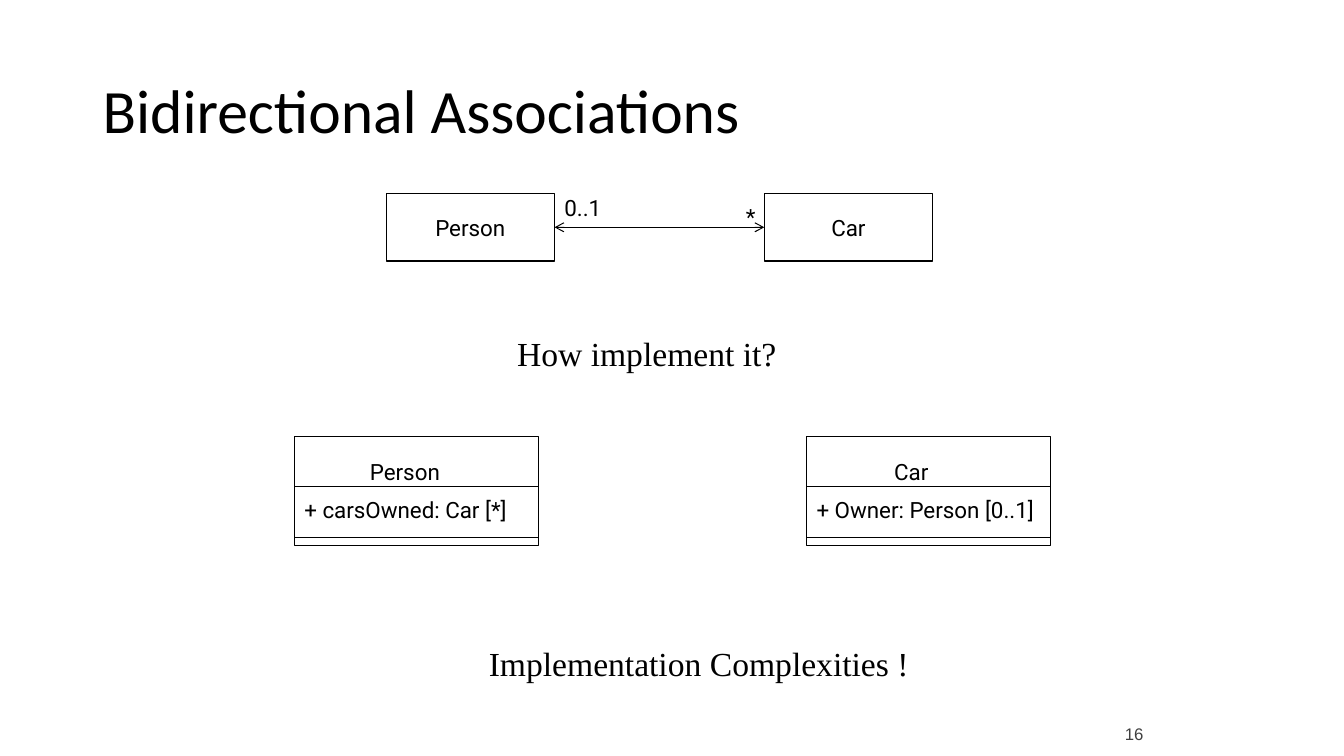
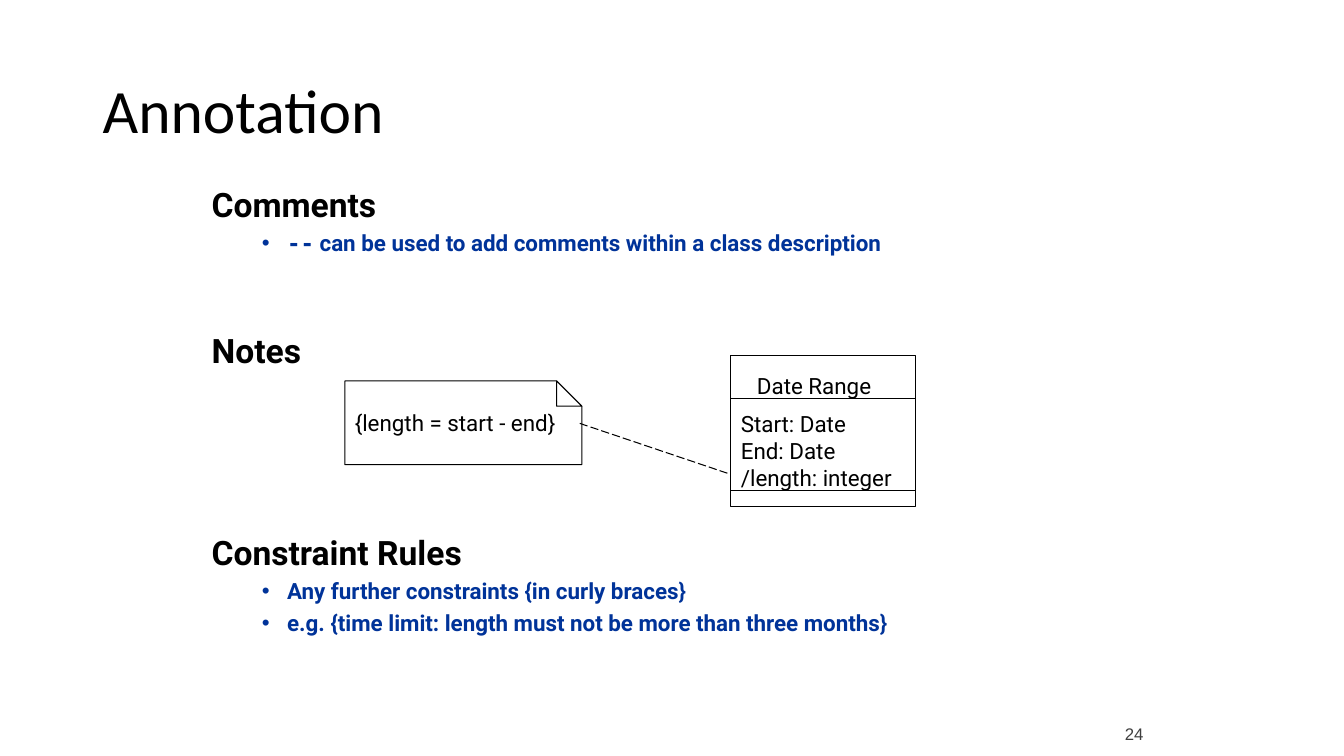
from lxml import etree
from pptx import Presentation
from pptx.dml.color import RGBColor
from pptx.enum import dml, shapes, text
from pptx.oxml.ns import qn
from pptx.util import Inches, Pt

BLACK = RGBColor(0x00, 0x00, 0x00)
GREY = RGBColor(0x3F, 0x3F, 0x3F)
WHITE = RGBColor(0xFF, 0xFF, 0xFF)
BLUE = RGBColor(0x00, 0x33, 0x99)
SANS, SERIF, MONO = "Roboto", "Times New Roman", "DejaVu Sans Mono"
MIDDLE, BOTTOM = text.MSO_ANCHOR.MIDDLE, text.MSO_ANCHOR.BOTTOM
CENTER, RIGHT = text.PP_ALIGN.CENTER, text.PP_ALIGN.RIGHT

ENTITIES = [("Person", 3.83), ("Car", 7.58)]
ENTITY_TOP, ENTITY_WIDTH, ENTITY_HEIGHT = 1.92, 1.67, 0.67
MULTIPLICITIES = [("*", (7.3, 1.97, 0.35, 0.37)), ("0..1", (5.5, 1.88, 0.7, 0.37))]
REMARKS = [
    ("How implement it?", (4.58, 3.25, 3.67, 0.5), CENTER),
    ("Implementation Complexities !", (4.75, 6.33, 4.6, 0.5), None),
]
OWNER_CLASSES = [
    dict(name="Person", members=["+ carsOwned: Car [*]"], name_indent=0.65,
         area=(2.92, 4.33, 2.42, 1.08), dividers=(0.5, 1)),
    dict(name="Car", members=["+ Owner: Person [0..1]"], name_indent=0.77,
         area=(8, 4.33, 2.42, 1.08), dividers=(0.5, 1)),
]
DATE_CLASS = dict(name="Date Range", members=["Start: Date", "End: Date", "/length: integer"],
                  name_indent=0.16, area=(7.25, 3.53, 1.83, 1.5), dividers=(0.42, 1.34))
SECTIONS = [
    ("Comments", 1.78, [[("--", MONO), (" can be used to add comments within a class description", SANS)]]),
    ("Notes", 3.22, []),
    ("Constraint Rules", 5.23, [
        [("Any further constraints {in curly braces}", SANS)],
        [("e.g. {time limit: length must not be more than three months}", SANS)],
    ]),
]
NOTE_TEXT = "{length = start - end}"
NOTE_AREA, FOLD = (3.42, 3.78, 2.35, 0.83), 0.25


def inches(values):
    return [Inches(value) for value in values]


def add_span(para, content, font=SANS, size=16, color=BLACK, bold=False):
    span = para.add_run()
    span.text = content
    span.font.name, span.font.size, span.font.bold = font, Pt(size), bold
    span.font.color.rgb = color


def write(box, content, align=None, anchor=None, spacing=None, **style):
    frame = box.text_frame
    frame.word_wrap = True
    if anchor is not None:
        frame.vertical_anchor = anchor
    lines = [content] if isinstance(content, str) else content
    for index, line in enumerate(lines):
        para = frame.paragraphs[0] if index == 0 else frame.add_paragraph()
        para.alignment = align or text.PP_ALIGN.LEFT
        para.line_spacing = spacing
        add_span(para, line, **style)
    return frame


def add_label(page, content, area, **style):
    return write(page.shapes.add_textbox(*inches(area)), content, **style)


def outline(box, fill=None):
    box.shadow.inherit = False
    box.line.color.rgb, box.line.width = BLACK, Pt(0.75)
    if fill is None:
        box.fill.background()
    else:
        box.fill.solid()
        box.fill.fore_color.rgb = fill
    return box


def add_box(page, area, kind=shapes.MSO_SHAPE.RECTANGLE, fill=None):
    return outline(page.shapes.add_shape(kind, *inches(area)), fill)


def add_line(page, ends, dash=None, arrows=False):
    line = page.shapes.add_connector(shapes.MSO_CONNECTOR.STRAIGHT, *inches(ends))
    line.line.color.rgb, line.line.width = BLACK, Pt(0.75)
    if dash is not None:
        line.line.dash_style = dash
    if arrows:
        stroke = line.line._get_or_add_ln()
        for end in ("a:headEnd", "a:tailEnd"):
            etree.SubElement(stroke, qn(end), type="arrow")
    etree.SubElement(line._element.spPr, qn("a:effectLst"))


def add_class(page, name, members, name_indent, area, dividers):
    left, top, width, _ = area
    frame = write(add_box(page, area), [name, *members], anchor=MIDDLE)
    frame.paragraphs[0]._p.get_or_add_pPr().set("marL", str(Inches(name_indent)))
    frame.paragraphs[1].space_before = Pt(8)
    for offset in dividers:
        add_line(page, (left, top + offset, left + width, top + offset))


def add_note(page):
    left, top, width, height = NOTE_AREA
    right, bottom = left + width, top + height
    corners = [(right - FOLD, top), (right, top + FOLD), (right, bottom), (left, bottom)]
    builder = page.shapes.build_freeform(Inches(left), Inches(top), scale=1.0)
    builder.add_line_segments([inches(corner) for corner in corners], close=True)
    write(outline(builder.convert_to_shape()), NOTE_TEXT, anchor=MIDDLE)
    add_box(page, (right - FOLD, top, FOLD, FOLD), shapes.MSO_SHAPE.RIGHT_TRIANGLE, WHITE)


def add_section(page, heading, top, bullets):
    frame = add_label(page, heading, (2, top, 9.33, 0.5 + 0.31 * len(bullets)), size=24, bold=True)
    for spans in bullets:
        para = frame.add_paragraph()
        props = para._p.get_or_add_pPr()
        props.set("marL", str(Inches(0.75)))
        props.set("indent", str(Inches(-0.25)))
        color = etree.SubElement(props, qn("a:buClr"))
        etree.SubElement(color, qn("a:srgbClr"), val=str(BLUE))
        etree.SubElement(props, qn("a:buFont"), typeface="Arial")
        etree.SubElement(props, qn("a:buChar"), char="•")
        para.space_before = Pt(3.5)
        for content, font in spans:
            add_span(para, content, font=font, color=BLUE, bold=True)


def add_page(deck, title, number):
    page = deck.slides.add_slide(deck.slide_layouts[6])
    add_label(page, title, (0.92, 0.4, 11.5, 1.45), anchor=MIDDLE, spacing=0.9, font="Calibri", size=44)
    footer = add_label(page, number, (10.64, 7.08, 0.8, 0.3), align=RIGHT, anchor=BOTTOM,
                       font="Arial", size=12, color=GREY)
    footer.margin_bottom = 0
    return page


def build_associations(deck):
    page = add_page(deck, "Bidirectional Associations", "16")
    for name, left in ENTITIES:
        box = add_box(page, (left, ENTITY_TOP, ENTITY_WIDTH, ENTITY_HEIGHT))
        write(box, name, align=CENTER, anchor=MIDDLE)
    (_, first), (_, second) = ENTITIES
    middle = ENTITY_TOP + ENTITY_HEIGHT / 2
    add_line(page, (first + ENTITY_WIDTH, middle, second, middle), arrows=True)
    for content, area in MULTIPLICITIES:
        add_label(page, content, area)
    for owner in OWNER_CLASSES:
        add_class(page, **owner)
    for content, area, align in REMARKS:
        add_label(page, content, area, align=align, font=SERIF, size=24)


def build_annotation(deck):
    page = add_page(deck, "Annotation", "24")
    for section in SECTIONS:
        add_section(page, *section)
    add_note(page)
    add_class(page, **DATE_CLASS)
    add_line(page, (5.75, 4.2, 7.23, 4.7), dash=dml.MSO_LINE.LONG_DASH)


def main():
    deck = Presentation()
    deck.slide_width, deck.slide_height = inches((13.33, 7.5))
    build_associations(deck)
    build_annotation(deck)
    deck.save("out.pptx")


if __name__ == "__main__":
    main()
